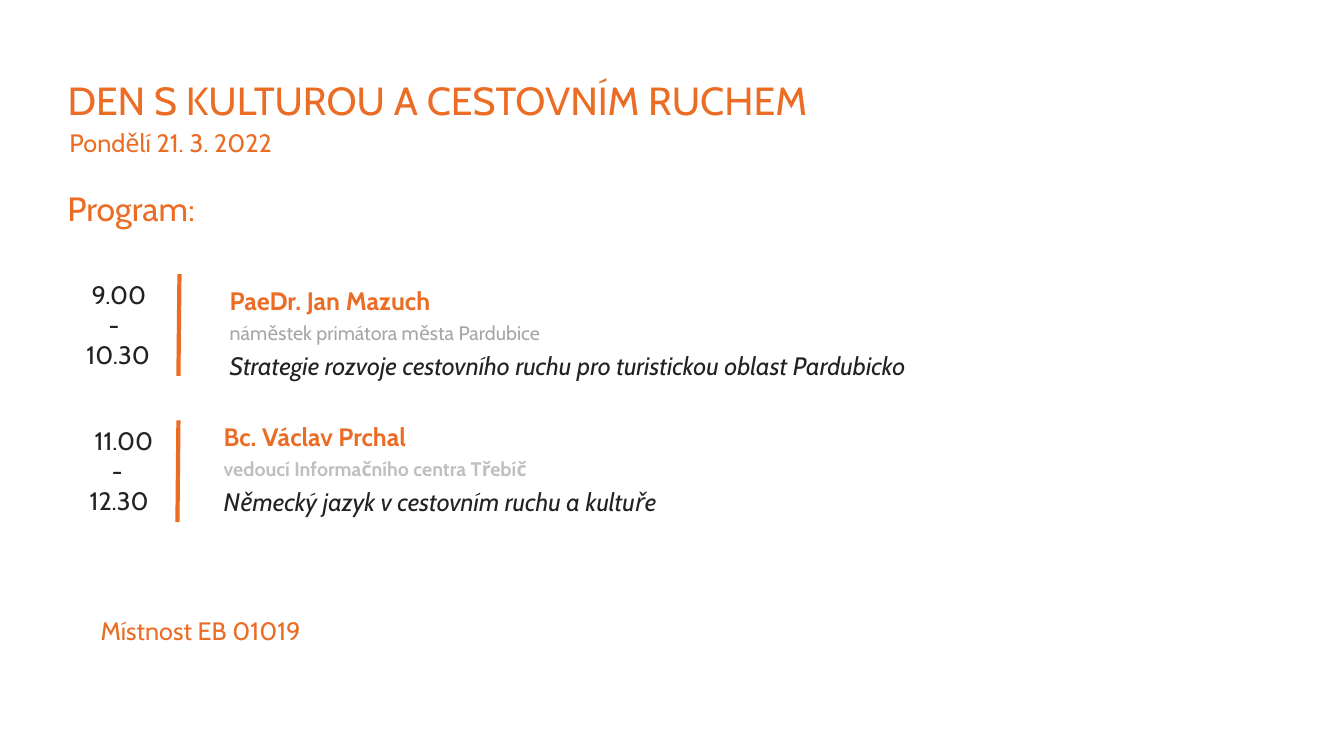
import pptx
import pptx.util
import pptx.dml.color
import pptx.enum.shapes
import pptx.enum.text
import pptx.oxml.ns
from dataclasses import dataclass
from lxml import etree

Inches = pptx.util.Inches


@dataclass(frozen=True)
class Theme:
    font: str = "Cabin"
    accent: str = "EB6D25"
    ink: str = "232220"
    grey: str = "A6A6A6"
    pale: str = "BFBFBF"
    title: int = 28
    head: int = 24
    text: int = 18
    small: int = 14
    rule: int = 3


THEME = Theme()


def style(par, size, color, bold=False, italic=False):
    font = par.font
    font.name = THEME.font
    font.size = pptx.util.Pt(size)
    font.bold = bold
    font.italic = italic
    font.color.rgb = pptx.dml.color.RGBColor.from_string(color)


def label(slide, box, text, size, color, wrap=False, **look):
    shape = slide.shapes.add_textbox(*map(Inches, box))
    shape.text_frame.word_wrap = wrap
    par = shape.text_frame.paragraphs[0]
    par.text = text
    style(par, size, color, **look)


# Heading: title, date and section name
def header(slide, left, top):
    title = slide.shapes.title
    title.left, title.top = Inches(left), Inches(top)
    title.width, title.height = Inches(8.44), Inches(0.88)
    frame = title.text_frame
    frame.text = "DEN S KULTUROU A CESTOVNÍM RUCHEM"
    frame.word_wrap = True
    frame.auto_size = pptx.enum.text.MSO_AUTO_SIZE.NONE
    frame.vertical_anchor = pptx.enum.text.MSO_ANCHOR.TOP
    par = frame.paragraphs[0]
    par.alignment = pptx.enum.text.PP_ALIGN.LEFT
    par.line_spacing = 1.0
    style(par, THEME.title, THEME.accent)

    label(slide, (left + 0.02, top + 0.5, 2.35, 0.4),
          "Pondělí 21. 3. 2022", THEME.text, THEME.accent)
    label(slide, (left, top + 1.11, 4.5, 0.5),
          "Program:", THEME.head, THEME.accent, wrap=True)


# Start and end time, one above the other
def times(slide, box, start, end):
    frame = slide.shapes.add_textbox(*map(Inches, box)).text_frame
    frame.word_wrap = False
    for i, (text, indent) in enumerate(((start, 0.05), ("-", 0.22), (end, 0))):
        par = frame.add_paragraph() if i else frame.paragraphs[0]
        par.text = text
        props = par._p.get_or_add_pPr()
        props.set("marL", str(Inches(indent)))
        props.set("indent", "0")
        style(par, THEME.text, THEME.ink)


# Slightly slanted line between time and talk
def rule(slide, left, top, height):
    line = slide.shapes.add_connector(
        pptx.enum.shapes.MSO_CONNECTOR.STRAIGHT,
        Inches(left), Inches(top), Inches(left - 0.01), Inches(top + height))
    line.line.color.rgb = pptx.dml.color.RGBColor.from_string(THEME.accent)
    line.line.width = pptx.util.Pt(THEME.rule)
    etree.SubElement(line._element.spPr, pptx.oxml.ns.qn("a:effectLst"))


# Speaker, post and topic
def talk(slide, left, top, widths, texts, tint, strong):
    name, post, topic = texts
    label(slide, (left, top, widths[0], 0.71), name,
          THEME.text, THEME.accent, bold=True)
    label(slide, (left, top + 0.35, widths[1], 0.64), post,
          THEME.small, tint, bold=strong)
    label(slide, (left, top + 0.65, widths[2], 0.4), topic,
          THEME.text, THEME.ink, italic=True)


def main():
    deck = pptx.Presentation()
    deck.slide_width, deck.slide_height = Inches(13.33), Inches(7.5)
    slide = deck.slides.add_slide(deck.slide_layouts[5])
    header(slide, 0.57, 0.71)

    # Morning talk
    times(slide, (0.76, 2.72, 0.83, 1.01), "9.00", "10.30")
    rule(slide, 1.78, 2.72, 1.01)
    talk(slide, 2.18, 2.78, (2.5, 3.75, 8.27),
         ("PaeDr. Jan Mazuch", "náměstek primátora města Pardubice",
          "Strategie rozvoje cestovního ruchu pro turistickou oblast Pardubicko"),
         THEME.grey, False)

    # Midday talk
    times(slide, (0.79, 4.17, 0.89, 1.01), "11.00", "12.30")
    rule(slide, 1.77, 4.17, 1.01)
    talk(slide, 2.12, 4.13, (2.29, 3.63, 5.34),
         ("Bc. Václav Prchal", "vedoucí Informačního centra Třebíč",
          "Německý jazyk v cestovním ruchu a kultuře"),
         THEME.pale, True)

    # Room
    label(slide, (0.9, 6.06, 2.28, 0.4), "Místnost EB 01019",
          THEME.text, THEME.accent)
    deck.save("out.pptx")


if __name__ == "__main__":
    main()
